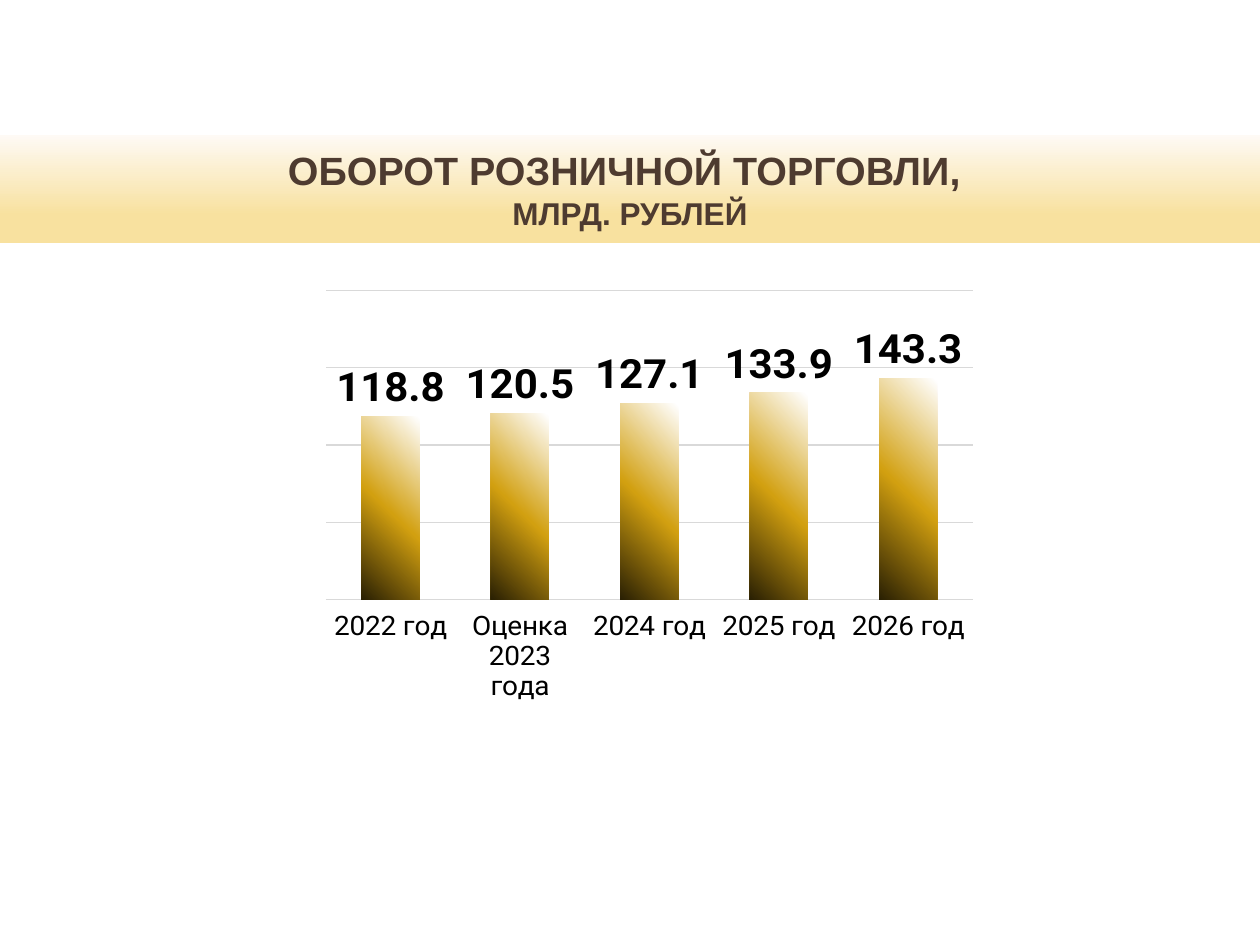
from lxml.etree import SubElement
from pptx import Presentation
from pptx.chart.data import CategoryChartData
from pptx.dml.color import RGBColor
from pptx.enum.chart import XL_CHART_TYPE, XL_LABEL_POSITION, XL_TICK_LABEL_POSITION, XL_TICK_MARK
from pptx.enum.shapes import MSO_SHAPE
from pptx.enum.text import MSO_ANCHOR, PP_ALIGN
from pptx.oxml import parse_xml
from pptx.oxml.ns import nsdecls, qn
from pptx.util import Inches, Pt

HEX = {"text": "000000", "title": "4E3B30", "grid": "D9D9D9",
       "cream": "FEFAF5", "sand": "F8E19F",
       "white": "FFFFFF", "gold": "D2A010", "dark": "2A2003"}
YEARS = ["2022 год", "Оценка 2023 года", "2024 год", "2025 год", "2026 год"]
SALES = [118.8, 120.5, 127.1, 133.9, 143.3]


class Deck:
    def __init__(self, wide=10, high=7.5):
        self.prs = Presentation()
        self.prs.slide_width = Inches(wide)
        self.prs.slide_height = Inches(high)
        self.slide = self.prs.slides.add_slide(self.prs.slide_layouts[6])

    def area(self, left, top, width, height):
        """Turn shares of the slide into lengths."""
        wide, high = self.prs.slide_width, self.prs.slide_height
        return (int(left * wide), int(top * high),
                int(width * wide), int(height * high))

    def color(self, name):
        return RGBColor.from_string(HEX[name])

    def font(self, font, size, name="text", face="Roboto", bold=False):
        font.size, font.name, font.bold = Pt(size), face, bold
        font.color.rgb = self.color(name)

    def line(self, line):
        line.width = Pt(0.75)
        line.color.rgb = self.color("grid")

    def blend(self, fill, owner, angle, stops):
        """Fill with a gradient; the angle runs clockwise."""
        fill.gradient()
        fill.gradient_angle = 360 - angle
        chain = next(owner.iter(qn("a:gsLst")))
        for old in list(chain):
            chain.remove(old)
        for share, name in stops:
            stop = SubElement(chain, qn("a:gs"), pos=str(share * 1000))
            SubElement(stop, qn("a:srgbClr"), val=HEX[name])

    def band(self, place, rows):
        box = self.slide.shapes.add_shape(MSO_SHAPE.RECTANGLE, *self.area(*place))
        box.shadow.inherit = False
        box.line.fill.background()
        self.blend(box.fill, box._element, 90,
                   [(0, "cream"), (74, "sand"), (100, "sand")])
        frame = box.text_frame
        frame.word_wrap = True
        frame.vertical_anchor = MSO_ANCHOR.MIDDLE
        para = frame.paragraphs[0]
        para.text = "\v".join(text for text, size in rows)
        para.alignment = PP_ALIGN.CENTER
        for run, (text, size) in zip(para.runs, rows):
            self.font(run.font, size, "title", "Arial", True)

    def bars(self, place, plot, cats, vals):
        data = CategoryChartData(number_format="#,##0.0")
        data.categories = cats
        data.add_series("Series 1", vals)
        chart = self.slide.shapes.add_chart(
            XL_CHART_TYPE.COLUMN_CLUSTERED, *self.area(*place), data).chart
        chart.has_legend = chart.has_title = False
        self.font(chart.font, 10)
        self.axes(chart)
        self.inner(chart, plot)

        group = chart.plots[0]
        group.gap_width, group.overlap = 123, -28
        group.vary_by_categories = False
        series = group.series[0]
        self.blend(series.format.fill, series._element, 135,
                   [(1, "white"), (52, "gold"), (100, "dark")])
        labels = series.data_labels
        labels.show_value = True
        labels.number_format = "#,##0.0"
        labels.number_format_is_linked = False
        labels.position = XL_LABEL_POSITION.OUTSIDE_END
        self.font(labels.font, 24, bold=True)

    def axes(self, chart):
        cat, val = chart.category_axis, chart.value_axis
        cat.major_tick_mark = XL_TICK_MARK.NONE
        cat.tick_label_position = XL_TICK_LABEL_POSITION.LOW
        self.font(cat.tick_labels.font, 16)
        self.line(cat.format.line)
        val.minimum_scale, val.maximum_scale, val.major_unit = 0, 220, 50
        val.has_major_gridlines = True
        self.line(val.major_gridlines.format.line)
        val.visible = False

    def inner(self, chart, plot):
        """Fix the inner plot area, in shares of the chart."""
        area = chart._chartSpace.chart.plotArea
        for old in area.findall(qn("c:layout")):
            area.remove(old)
        sizes = "".join(f'<c:{key} val="{share}"/>' for key, share in zip("xywh", plot))
        area.insert(0, parse_xml(
            f'<c:layout {nsdecls("c")}><c:manualLayout><c:layoutTarget val="inner"/>'
            '<c:xMode val="edge"/><c:yMode val="edge"/>'
            f'{sizes}</c:manualLayout></c:layout>'))


def main():
    deck = Deck()
    deck.band((0, 1.07 / 7.5, 1, 0.86 / 7.5),
              [("ОБОРОТ РОЗНИЧНОЙ ТОРГОВЛИ, ", 22.5), ("МЛРД. РУБЛЕЙ", 18)])
    deck.bars((0.216, 1.93 / 7.5, 0.593, 3.64 / 7.5),
              (0.072, 0.038, 0.866, 0.775), YEARS, SALES)
    deck.prs.save("out.pptx")


if __name__ == "__main__":
    main()
